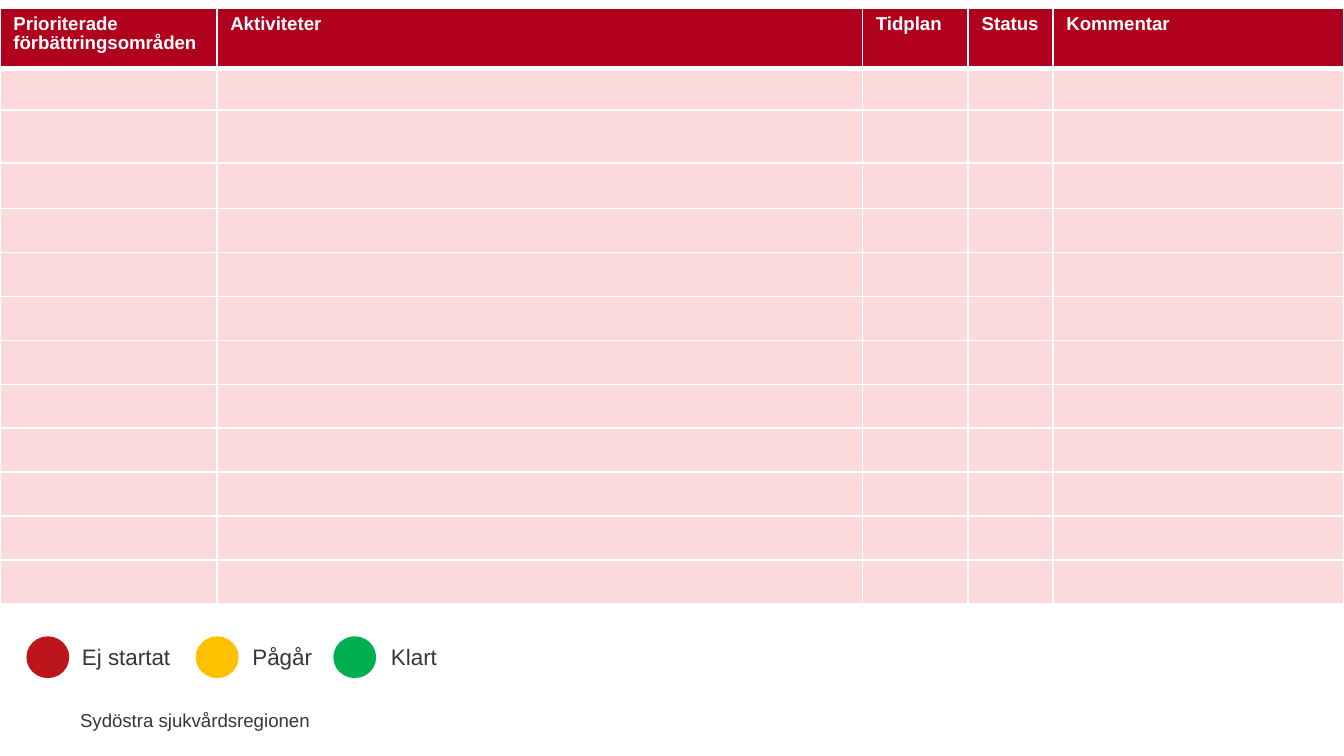
from lxml import etree
from pptx import Presentation
from pptx.dml.color import RGBColor
from pptx.enum.shapes import MSO_SHAPE
from pptx.enum.text import PP_ALIGN
from pptx.oxml.ns import qn
from pptx.util import Cm, Pt

OVAL = MSO_SHAPE.OVAL
LEFT, RIGHT = PP_ALIGN.LEFT, PP_ALIGN.RIGHT
RED, PINK, WHITE, GREY = "B1001E", "FCD9DA", "FFFFFF", "363636"


def rgb(color):
    return RGBColor.from_string(color)


def write(tf, text, size=12, color=GREY, bold=False, align=LEFT, spacing=1.0):
    p = tf.paragraphs[0]
    p.alignment = align
    p.line_spacing = spacing
    r = p.add_run()
    r.text = text
    r.font.name = "Arial"
    r.font.size = Pt(size)
    r.font.bold = bold
    r.font.color.rgb = rgb(color)


prs = Presentation()
prs.slide_width, prs.slide_height = Cm(25.4), Cm(14.28)
s = prs.slides.add_slide(prs.slide_layouts[6])

# Action plan table
headers = ["Prioriterade förbättringsområden", "Aktiviteter", "Tidplan", "Status", "Kommentar"]
col_widths = [4.1, 12.2, 2, 1.6, 5.5]
row_heights = [1.14, 0.79, 1, 0.86] + [0.83] * 9

table = s.shapes.add_table(len(row_heights), len(col_widths), Cm(0), Cm(0.15),
                           Cm(sum(col_widths)), Cm(sum(row_heights))).table
table.horz_banding = False
for column, width in zip(table.columns, col_widths):
    column.width = Cm(width)
for i, (row, height) in enumerate(zip(table.rows, row_heights)):
    row.height = Cm(height)
    for j, cell in enumerate(row.cells):
        tcPr = cell._tc.get_or_add_tcPr()
        widths = {"lnL": 1, "lnR": 1, "lnT": 3 if i == 1 else 1, "lnB": 3 if i == 0 else 1}
        for side, width in widths.items():
            ln = etree.SubElement(tcPr, qn("a:" + side), w=str(Pt(width)))
            fill = etree.SubElement(ln, qn("a:solidFill"))
            etree.SubElement(fill, qn("a:srgbClr"), val=WHITE)
        cell.fill.solid()
        cell.fill.fore_color.rgb = rgb(RED if i == 0 else PINK)
        if i == 0:
            write(cell.text_frame, headers[j], size=10, color=WHITE, bold=True, spacing=0.93)
        else:
            # Keeps empty rows from growing to the default text size
            cell.text_frame.paragraphs[0]._p.get_or_add_endParaRPr().set("sz", "1000")

# Status legend
legend = [
    ("Ej startat", "BC151C", 0.5, 1.3, 2.21, False),
    ("Pågår", "FFC000", 3.7, 4.52, 3.81, True),
    ("Klart", "00B050", 6.3, 7.14, 2.77, True),
]
for label, color, dot_left, text_left, width, wrap in legend:
    sp = s.shapes.add_shape(OVAL, Cm(dot_left), Cm(12.02), Cm(0.81), Cm(0.79))
    sp.shadow.inherit = False
    sp.fill.solid()
    sp.fill.fore_color.rgb = rgb(color)
    sp.line.fill.background()
    tf = s.shapes.add_textbox(Cm(text_left), Cm(12.02), Cm(width), Cm(0.77)).text_frame
    tf.word_wrap = wrap
    write(tf, label)

# Footer
tf = s.shapes.add_textbox(Cm(1.22), Cm(13.26), Cm(4.88), Cm(0.69)).text_frame
tf.word_wrap = False
write(tf, "Sydöstra sjukvårdsregionen", size=10, align=RIGHT)

prs.save("out.pptx")
